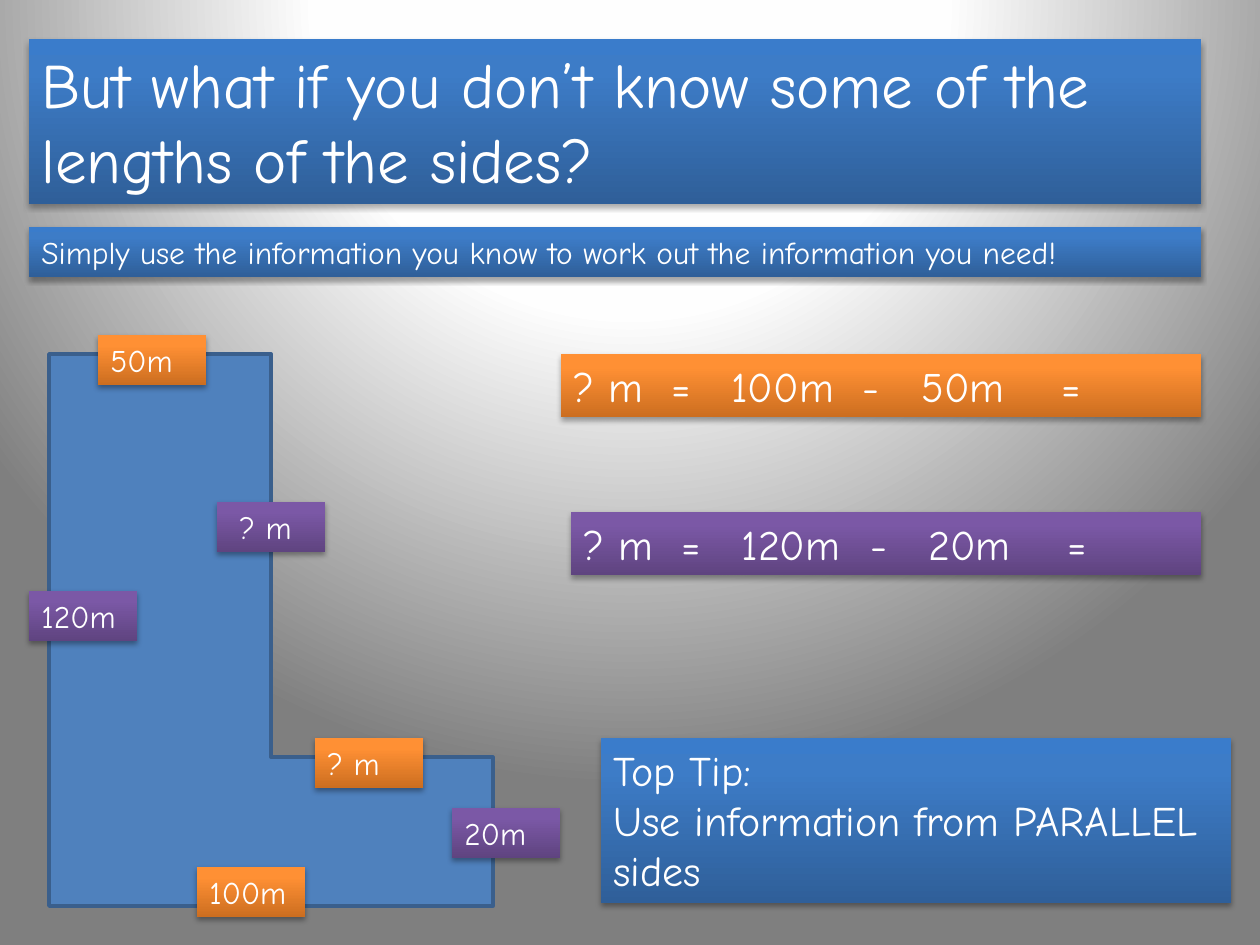
from dataclasses import dataclass

from pptx import Presentation
from pptx.dml.color import RGBColor
from pptx.enum.shapes import MSO_SHAPE as Shape
from pptx.enum.text import MSO_ANCHOR as Anchor, MSO_AUTO_SIZE as AutoSize, PP_ALIGN as Align
from pptx.oxml import parse_xml
from pptx.oxml.ns import nsdecls, qn
from pptx.util import Pt

PX = 914400 / 126


@dataclass(frozen=True)
class Theme:
    font: str = "Comic Neue"
    text: str = "FFFFFF"
    title_size: int = 36
    body_size: int = 24
    label_size: int = 18
    land: str = "4F81BD"
    land_edge: str = "3A5F8C"
    # Gradient stops at 0, 80 and 100 percent, from bottom to top
    blue: tuple = ("2F5F99", "3D7CC7", "3A7CCB")
    orange: tuple = ("CC6E20", "FF9034", "FF9136")
    purple: tuple = ("5F4480", "7B58A6", "7C57A8")
    backdrop: tuple = ("FFFFFF", "FEFEFE", "7F7F7F")


THEME = Theme()
UPWARD = '<a:lin ang="16200000" scaled="0"/>'
RADIAL = ('<a:path path="circle">'
          '<a:fillToRect l="50000" t="-80000" r="50000" b="180000"/></a:path>')


def emu(*lengths):
    return [round(length * PX) for length in lengths]


def fill_gradient(owner, fill, colors, positions, direction):
    """Fill with the colours at the given percentages; owner is the XML element holding the fill."""
    fill.gradient()
    stops = "".join(
        f'<a:gs pos="{position * 1000}"><a:srgbClr val="{color}"/></a:gs>'
        for position, color in zip(positions, colors))
    default = owner.find(".//" + qn("a:gradFill"))
    default.getparent().replace(default, parse_xml(
        f'<a:gradFill {nsdecls("a")} rotWithShape="1">'
        f'<a:gsLst>{stops}</a:gsLst>{direction}</a:gradFill>'))


def cast_shadow(shape):
    shape.shadow.inherit = False
    shape._element.spPr.find(qn("a:effectLst")).append(parse_xml(
        f'<a:outerShdw {nsdecls("a")} blurRad="40000" dist="23000" dir="5400000" rotWithShape="0">'
        '<a:srgbClr val="000000"><a:alpha val="35000"/></a:srgbClr></a:outerShdw>'))


def write(frame, text, *, size, tabs=(), indent=0):
    """Write one paragraph per line; tabs and indent are px from the text edge."""
    frame.word_wrap = True
    frame.auto_size = AutoSize.SHAPE_TO_FIT_TEXT
    frame.vertical_anchor = Anchor.TOP
    for number, line in enumerate(text.split("\n")):
        paragraph = frame.add_paragraph() if number else frame.paragraphs[0]
        paragraph.alignment = Align.LEFT
        properties = paragraph._p.get_or_add_pPr()
        if indent:
            properties.set("marL", str(*emu(indent)))
        if tabs:
            stops = "".join(f'<a:tab pos="{stop}" algn="l"/>' for stop in emu(*tabs))
            properties.append(parse_xml(f'<a:tabLst {nsdecls("a")}>{stops}</a:tabLst>'))
        run = paragraph.add_run()
        run.text = line
        run.font.name = THEME.font
        run.font.size = Pt(size)
        run.font.color.rgb = RGBColor.from_string(THEME.text)


def add_panel(slide, box, text, colors, **text_format):
    panel = slide.shapes.add_shape(Shape.RECTANGLE, *emu(*box))
    fill_gradient(panel._element.spPr, panel.fill, colors, (0, 80, 100), UPWARD)
    panel.line.fill.background()
    cast_shadow(panel)
    write(panel.text_frame, text, **text_format)


def add_heading(slide, box):
    left, top, width, _ = box
    add_panel(slide, (left, top, width, 165),
              "But what if you don’t know some of the lengths of the sides?",
              THEME.blue, size=THEME.title_size)
    add_panel(slide, (left, top + 188, width, 50),
              "Simply use the information you know to work out the information you need!",
              THEME.blue, size=THEME.label_size)


def add_field_plan(slide, box):
    """Draw the L-shaped field with a length label on each side."""
    left, top, _, _ = box
    field = slide.shapes.add_shape(Shape.CORNER, *emu(*box))
    field.adjustments[0], field.adjustments[1] = 0.335, 0.5
    field.shadow.inherit = False
    field.fill.solid()
    field.fill.fore_color.rgb = RGBColor.from_string(THEME.land)
    field.line.color.rgb = RGBColor.from_string(THEME.land_edge)
    field.line.width = Pt(2)

    side_lengths = (
        ("50m", 49, -19, THEME.orange, 0),
        ("100m", 148, 513, THEME.orange, 0),
        ("? m", 266, 384, THEME.orange, 0),
        ("120m", -20, 237, THEME.purple, 0),
        ("20m", 403, 454, THEME.purple, 0),
        ("? m", 168, 148, THEME.purple, 10),
    )
    for length, across, down, colors, indent in side_lengths:
        add_panel(slide, (left + across, top + down, 108, 50), length, colors,
                  size=THEME.label_size, indent=indent)


def add_workings(slide, box):
    """Stack the two subtractions, aligned to the right edge of the box."""
    left, top, width, _ = box
    right = left + width
    equations = (
        ("100m", "50m", 640, 0, THEME.orange, (98, 158, 289, 348, 488)),
        ("120m", "20m", 630, 158, THEME.purple, (98, 158, 287, 345, 484)),
    )
    for whole, part, length, down, colors, tabs in equations:
        add_panel(slide, (right - length, top + down, length, 63),
                  "\t".join(("? m", "=", whole, "-", part, "=")), colors,
                  size=THEME.body_size, tabs=tabs)


def add_tip(slide, box):
    add_panel(slide, box, "Top Tip:\nUse information from PARALLEL sides",
              THEME.blue, size=THEME.body_size)


def main():
    deck = Presentation()
    deck.slide_width, deck.slide_height = emu(1260, 945)
    slide = deck.slides.add_slide(deck.slide_layouts[6])
    fill_gradient(slide._element, slide.background.fill, THEME.backdrop, (0, 40, 100), RADIAL)
    add_heading(slide, (29, 39, 1172, 238))
    add_field_plan(slide, (49, 354, 444, 552))
    add_workings(slide, (561, 354, 640, 221))
    add_tip(slide, (601, 738, 630, 165))
    deck.save("out.pptx")


if __name__ == "__main__":
    main()
